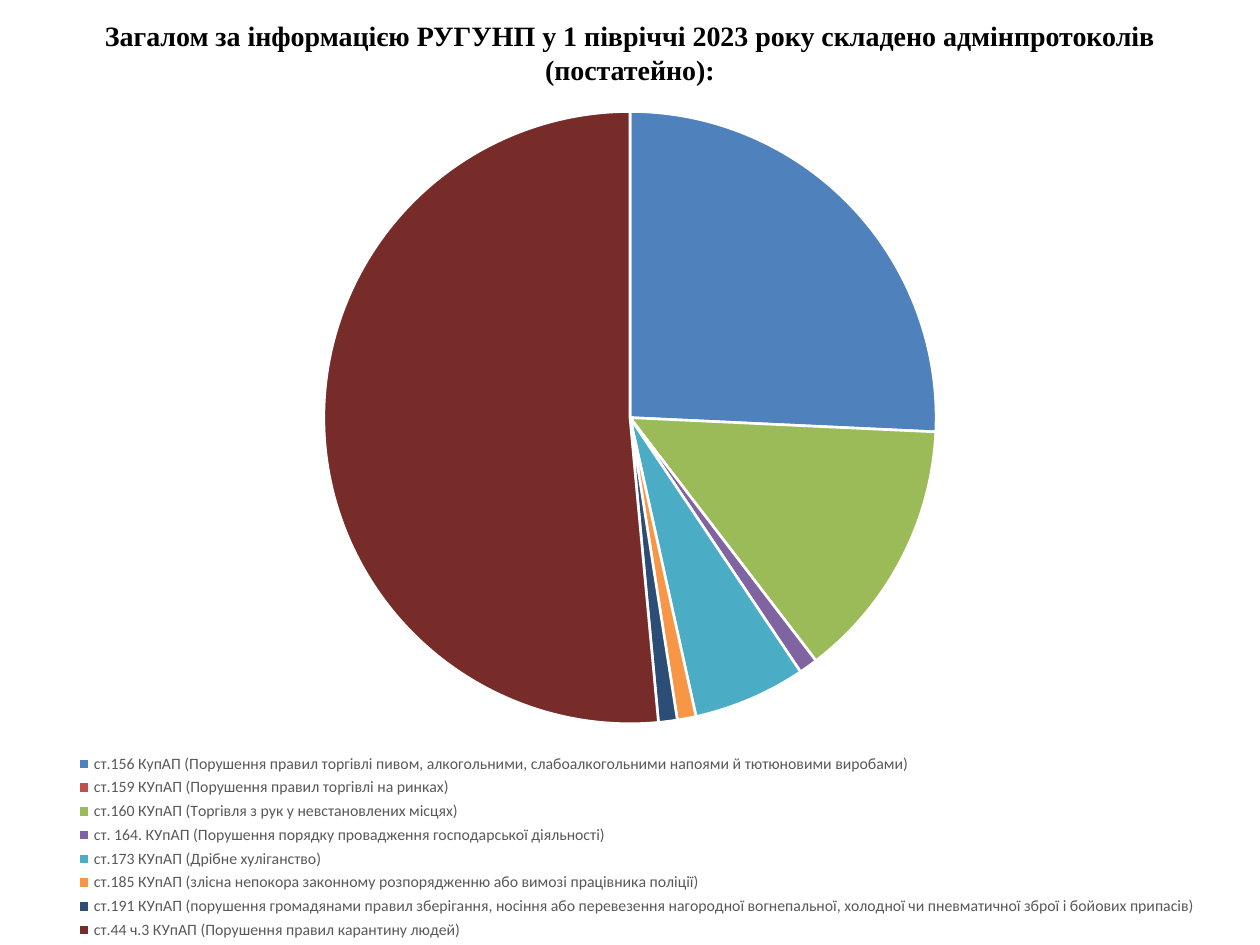
from lxml import etree
from pptx import Presentation
from pptx.chart.data import CategoryChartData
from pptx.dml.color import RGBColor
from pptx.enum.chart import XL_CHART_TYPE, XL_LEGEND_POSITION
from pptx.enum.text import MSO_ANCHOR, PP_ALIGN
from pptx.oxml import parse_xml
from pptx.oxml.ns import nsdecls, qn
from pptx.util import Inches, Pt

BLACK = RGBColor(0x00, 0x00, 0x00)
WHITE = RGBColor(0xFF, 0xFF, 0xFF)
GRAY = RGBColor(0x59, 0x59, 0x59)
BLUE = RGBColor(0x4F, 0x81, 0xBD)
RED = RGBColor(0xC0, 0x50, 0x4D)
GREEN = RGBColor(0x9B, 0xBB, 0x59)
PURPLE = RGBColor(0x80, 0x64, 0xA2)
TEAL = RGBColor(0x4B, 0xAC, 0xC6)
ORANGE = RGBColor(0xF7, 0x96, 0x46)
NAVY = RGBColor(0x2C, 0x4D, 0x75)
MAROON = RGBColor(0x77, 0x2C, 0x2A)

TITLE = "Загалом за інформацією РУГУНП у 1 півріччі 2023 року складено адмінпротоколів (постатейно):"
PROTOCOLS = [
    ("ст.156 КупАП (Порушення правил торгівлі пивом, алкогольними, "
     "слабоалкогольними напоями й тютюновими виробами)", 26, BLUE),
    ("ст.159 КУпАП (Порушення правил торгівлі на ринках)", 0, RED),
    ("ст.160 КУпАП (Торгівля з рук у невстановлених місцях)", 14, GREEN),
    ("ст. 164. КУпАП (Порушення порядку провадження господарської діяльності)", 1, PURPLE),
    ("ст.173 КУпАП (Дрібне хуліганство)", 6, TEAL),
    ("ст.185 КУпАП (злісна непокора законному розпорядженню або вимозі "
     "працівника поліції)", 1, ORANGE),
    ("ст.191 КУпАП (порушення громадянами правил зберігання, носіння або перевезення "
     "нагородної вогнепальної, холодної чи пневматичної зброї і бойових припасів)", 1, NAVY),
    ("ст.44 ч.3 КУпАП (Порушення правил карантину людей)", 52, MAROON),
]


def set_layout(element, x, y, w, h, inner=False):
    """Place a plot area or legend by shares of the chart's size."""
    for old in element.findall(qn("c:layout")):
        element.remove(old)
    layout = parse_xml(f"<c:layout {nsdecls('c')}><c:manualLayout/></c:layout>")
    values = [("xMode", "edge"), ("yMode", "edge"), ("x", x), ("y", y), ("w", w), ("h", h)]
    if inner:
        values.insert(0, ("layoutTarget", "inner"))
    for tag, value in values:
        etree.SubElement(layout[0], qn(f"c:{tag}")).set("val", str(value))
    position = element.find(qn("c:legendPos"))
    if position is None:
        element.insert(0, layout)
    else:
        position.addnext(layout)


class Deck:
    """Holds the style and the current slide; boxes are shares of the slide."""

    title_font, chart_font = "Times New Roman", "Calibri"

    def __init__(self, width, height):
        self.prs = Presentation()
        self.prs.slide_width, self.prs.slide_height = Inches(width), Inches(height)
        self.s = self.prs.slides.add_slide(self.prs.slide_layouts[5])

    def box(self, x, y, w, h):
        width, height = self.prs.slide_width, self.prs.slide_height
        return int(x * width), int(y * height), int(w * width), int(h * height)

    def style(self, font, name, size, color):
        font.name, font.size, font.color.rgb = name, Pt(size), color

    def title(self, text, *box):
        sp = self.s.shapes.title
        sp.left, sp.top, sp.width, sp.height = self.box(*box)
        tf = sp.text_frame
        tf.word_wrap = True
        tf.vertical_anchor = MSO_ANCHOR.TOP
        tf.margin_top = 0
        p = tf.paragraphs[0]
        p.alignment = PP_ALIGN.CENTER
        r = p.add_run()
        r.text = text
        self.style(r.font, self.title_font, 16, BLACK)
        r.font.bold = True

    def pie(self, rows, *box):
        labels, values, colors = zip(*rows)
        data = CategoryChartData()
        data.categories = labels
        data.add_series("Series 1", values)
        chart = self.s.shapes.add_chart(XL_CHART_TYPE.PIE, *self.box(*box), data).chart
        chart.has_title = False
        self.style(chart.font, self.chart_font, 10, BLACK)
        plot = chart.plots[0]
        plot.vary_by_categories = True
        for i, color in enumerate(colors):
            fmt = plot.series[0].points[i].format
            fmt.fill.solid()
            fmt.fill.fore_color.rgb = color
            fmt.line.color.rgb = WHITE
            fmt.line.width = Pt(1.5)
        chart.has_legend = True
        legend = chart.legend
        legend.position = XL_LEGEND_POSITION.BOTTOM
        legend.include_in_layout = False
        self.style(legend.font, self.chart_font, 9, GRAY)
        plot_area = chart.element.find(f".//{qn('c:plotArea')}")
        set_layout(plot_area, 0.257, 0.02, 0.486, 0.72, inner=True)
        set_layout(chart.element.find(f".//{qn('c:legend')}"), 0.05, 0.77, 0.91, 0.23)


def main():
    deck = Deck(10, 7.5)
    deck.title(TITLE, 0.05, 0.02, 0.9, 0.1)
    deck.pie(PROTOCOLS, 0, 0.1, 1, 0.9)
    deck.prs.save("out.pptx")


if __name__ == "__main__":
    main()
